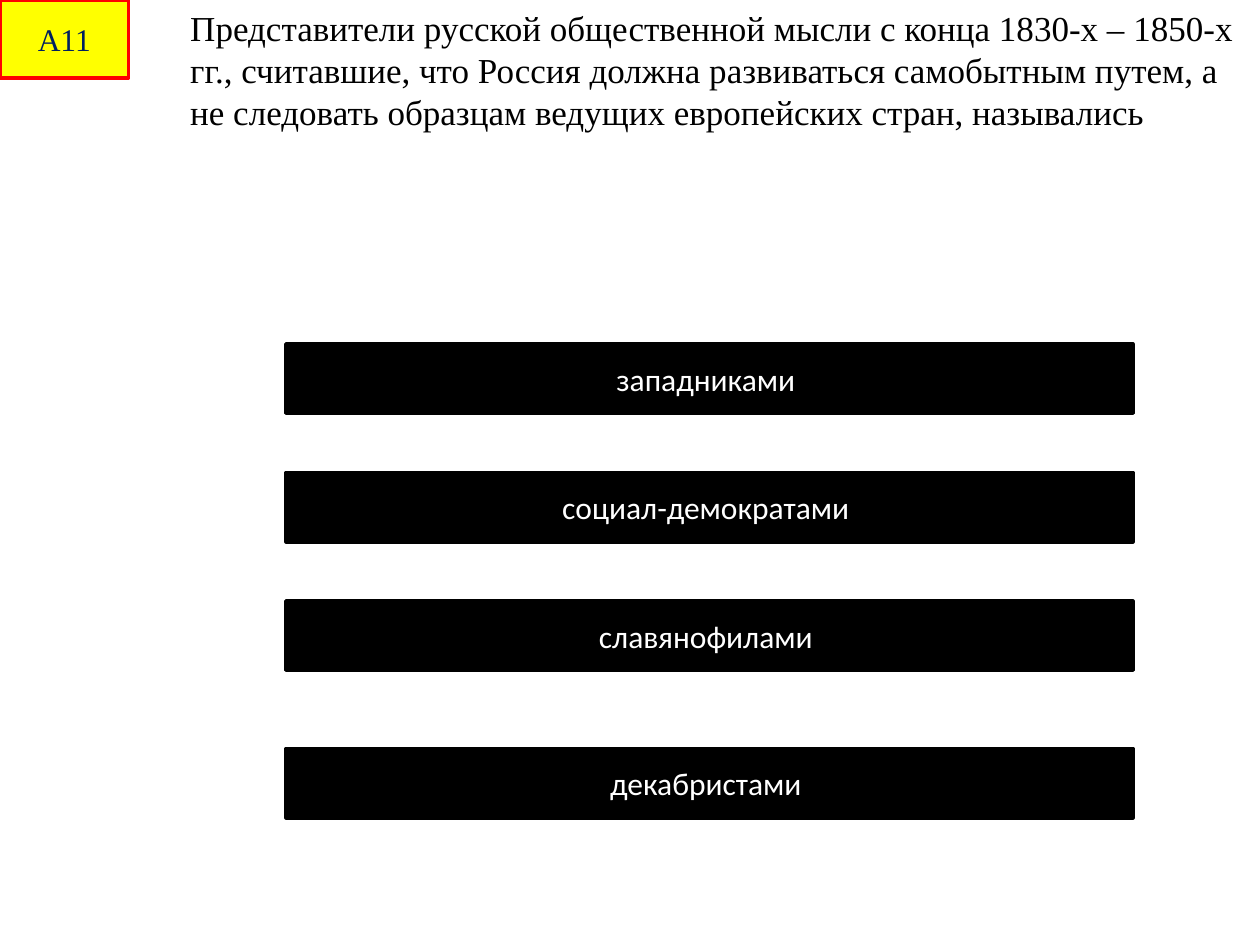
"""Builds a quiz slide with a numbered question and four answer buttons."""
from dataclasses import dataclass

from pptx import Presentation
from pptx.dml.color import RGBColor
from pptx.enum.shapes import MSO_SHAPE
from pptx.enum.text import MSO_ANCHOR, MSO_AUTO_SIZE, PP_ALIGN
from pptx.util import Inches, Pt


@dataclass(frozen=True)
class Theme:
    badge_fill: str = "FFFF00"
    badge_line: str = "FF0000"
    badge_ink: str = "002060"
    button: str = "000000"
    button_ink: str = "FFFFFF"
    question_ink: str = "000000"
    serif: str = "Times New Roman"
    sans: str = "Calibri"
    question_size: int = 20
    label_size: int = 18
    line_width: int = 2


def style_text(paragraph, face, size, ink, align):
    paragraph.alignment = align
    paragraph.font.name = face
    paragraph.font.size = Pt(size)
    paragraph.font.color.rgb = RGBColor.from_string(ink)


def add_label(kind, box, label, fill, line, face, ink):
    button = slide.shapes.add_shape(kind, *map(Inches, box))
    button.shadow.inherit = False
    button.fill.solid()
    button.fill.fore_color.rgb = RGBColor.from_string(fill)
    button.line.color.rgb = RGBColor.from_string(line)
    button.line.width = Pt(theme.line_width)
    button.text_frame.text = label
    button.text_frame.vertical_anchor = MSO_ANCHOR.MIDDLE
    style_text(button.text_frame.paragraphs[0], face, theme.label_size, ink, PP_ALIGN.CENTER)


theme = Theme()
WIDTH, HEIGHT = 10, 7.5
QUESTION_LEFT = 1.41
ANSWER_LEFT, ANSWER_WIDTH, ANSWER_HEIGHT = 2.27, 6.72, 0.55
FIRST_ROW, ROW_STEP, LAST_ROW = 2.73, 1.02, 5.94

deck = Presentation()
deck.slide_width, deck.slide_height = Inches(WIDTH), Inches(HEIGHT)
slide = deck.slides.add_slide(deck.slide_layouts[5])

question = slide.shapes.title
question.left, question.top = Inches(QUESTION_LEFT), Inches(0)
question.width, question.height = Inches(WIDTH - QUESTION_LEFT), Inches(1.11)
question.text_frame.text = (
    "Представители русской общественной мысли с конца 1830-х – 1850-х гг., "
    "считавшие, что Россия должна развиваться самобытным путем, а не следовать "
    "образцам ведущих европейских стран, назывались"
)
question.text_frame.word_wrap = True
question.text_frame.auto_size = MSO_AUTO_SIZE.SHAPE_TO_FIT_TEXT
question.text_frame.vertical_anchor = MSO_ANCHOR.TOP
style_text(question.text_frame.paragraphs[0], theme.serif, theme.question_size,
           theme.question_ink, PP_ALIGN.LEFT)

add_label(MSO_SHAPE.RECTANGLE, (0, 0, 1.02, 0.62), "А11",
          theme.badge_fill, theme.badge_line, theme.serif, theme.badge_ink)

WRONG = MSO_SHAPE.ACTION_BUTTON_BACK_OR_PREVIOUS
RIGHT = MSO_SHAPE.ACTION_BUTTON_FORWARD_OR_NEXT
answers = [
    ("западниками ", WRONG),
    ("социал-демократами ", WRONG),
    ("славянофилами ", RIGHT),
    ("декабристами ", WRONG),
]
answer_tops = [FIRST_ROW + row * ROW_STEP for row in range(len(answers) - 1)] + [LAST_ROW]
for (answer, kind), top in zip(answers, answer_tops):
    add_label(kind, (ANSWER_LEFT, top, ANSWER_WIDTH, ANSWER_HEIGHT), answer,
              theme.button, theme.button, theme.sans, theme.button_ink)

deck.save("out.pptx")
